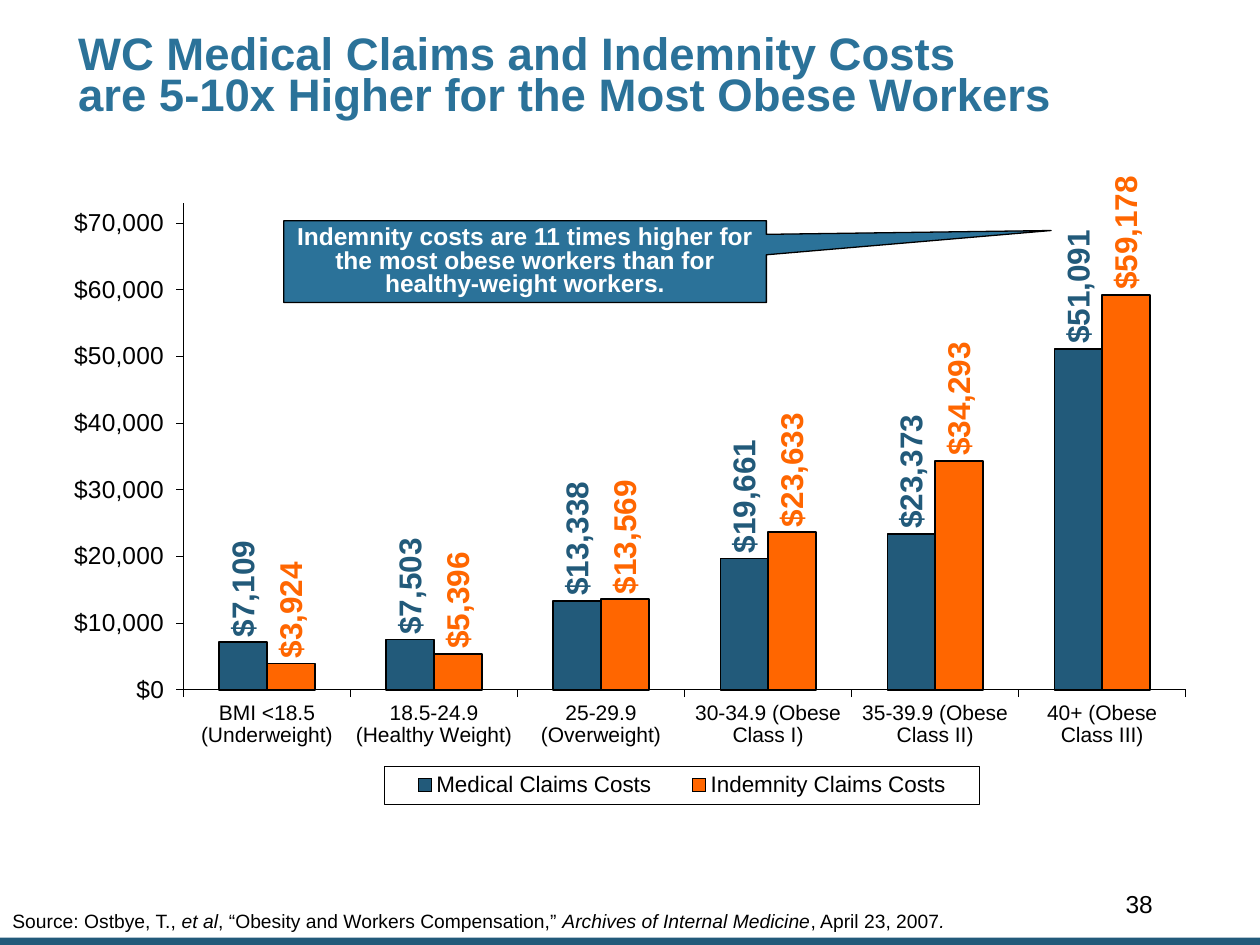
from dataclasses import dataclass
from lxml.etree import SubElement
from pptx import Presentation
from pptx.chart.data import CategoryChartData
from pptx.dml.color import RGBColor
from pptx.enum.chart import XL_CHART_TYPE, XL_LABEL_POSITION, XL_LEGEND_POSITION, XL_TICK_MARK
from pptx.enum.shapes import MSO_SHAPE
from pptx.enum.text import MSO_ANCHOR, MSO_AUTO_SIZE, PP_ALIGN
from pptx.oxml import parse_xml
from pptx.oxml.ns import nsdecls, qn
from pptx.util import Cm, Pt

TITLE = "WC Medical Claims and Indemnity Costs\vare 5-10x Higher for the Most Obese Workers"
CALLOUT = ("Indemnity costs are 11 times higher for the most obese workers "
           "than for healthy-weight workers.")
PAGE_NUMBER = "38"
SOURCE = [
    ("Source: Ostbye, T., ", False),
    ("et al", True),
    (", “Obesity and Workers Compensation,” ", False),
    ("Archives of Internal Medicine", True),
    (", April 23, 2007", False),
    (".", True),
]
CATEGORIES = [
    "BMI <18.5 (Underweight)", "18.5-24.9 (Healthy Weight)", "25-29.9 (Overweight)",
    "30-34.9 (Obese Class I)", "35-39.9 (Obese Class II)", "40+ (Obese Class III)",
]
COSTS = {
    "Medical Claims Costs": [7109, 7503, 13338, 19661, 23373, 51091],
    "Indemnity Claims Costs": [3924, 5396, 13569, 23633, 34293, 59178],
}
MONEY = '"$"#,##0_);[Red]\\("$"#,##0\\)'
PLOT_AREA = {"x": 0.145, "y": 0.057, "w": 0.825, "h": 0.755}
LEGEND_AREA = {"x": 0.31, "y": 0.93, "w": 0.49, "h": 0.06}


@dataclass(frozen=True)
class Theme:
    font: str = "Arial"
    black: RGBColor = RGBColor(0, 0, 0)
    white: RGBColor = RGBColor(255, 255, 255)
    blue: RGBColor = RGBColor(0x2B, 0x72, 0x99)
    navy: RGBColor = RGBColor(0x22, 0x5A, 0x7A)
    orange: RGBColor = RGBColor(0xFF, 0x66, 0x00)
    title: float = 26
    value: float = 18
    body: float = 14
    legend: float = 12.8
    category: float = 12
    source: float = 11


THEME = Theme()


def set_font(font, size, color, bold=False):
    font.name, font.size, font.bold = THEME.font, Pt(size), bold
    font.color.rgb = color


def set_line(line, width):
    line.color.rgb = THEME.black
    line.width = Pt(width)


def place(shape, left, top, width, height):
    shape.left, shape.top = Cm(left), Cm(top)
    shape.width, shape.height = Cm(width), Cm(height)


def make_layout(area, inner=False):
    layout = parse_xml(f"<c:layout {nsdecls('c')}/>")
    manual = SubElement(layout, qn("c:manualLayout"))
    settings = {"layoutTarget": "inner"} if inner else {}
    settings.update(xMode="edge", yMode="edge", **area)
    for name, value in settings.items():
        SubElement(manual, qn(f"c:{name}")).set("val", str(value))
    return layout


def add_title(page):
    title = page.shapes.title
    place(title, 1.32, 0.66, 21.87, 1.88)
    frame = title.text_frame
    frame.text = TITLE
    frame.auto_size = MSO_AUTO_SIZE.NONE
    frame.vertical_anchor = MSO_ANCHOR.BOTTOM
    para = frame.paragraphs[0]
    para.alignment, para.line_spacing = PP_ALIGN.LEFT, 0.75
    set_font(para.font, THEME.title, THEME.blue, True)


def add_footer(page):
    band = page.shapes.add_shape(MSO_SHAPE.RECTANGLE, 0, Cm(18.9), Cm(25.4), Cm(0.15))
    band.shadow.inherit = False
    band.fill.solid()
    band.fill.fore_color.rgb = THEME.navy
    band.line.fill.background()

    number = page.shapes.add_textbox(Cm(18.21), Cm(17.58), Cm(5.28), Cm(1.27))
    number.text_frame.text = PAGE_NUMBER
    number.text_frame.word_wrap = True
    number.text_frame.vertical_anchor = MSO_ANCHOR.MIDDLE
    para = number.text_frame.paragraphs[0]
    para.alignment = PP_ALIGN.RIGHT
    set_font(para.font, THEME.body, THEME.black)

    source = page.shapes.add_textbox(0, Cm(18.26), Cm(19.46), Cm(0.69))
    source.text_frame.word_wrap = False
    para = source.text_frame.paragraphs[0]
    para.line_spacing = 0.9
    set_font(para.font, THEME.source, THEME.black)
    for text, italic in SOURCE:
        span = para.add_run()
        span.text, span.font.italic = text, italic


def format_axis(axis, size):
    axis.has_major_gridlines = False
    axis.major_tick_mark = XL_TICK_MARK.OUTSIDE
    axis.minor_tick_mark = XL_TICK_MARK.NONE
    set_line(axis.format.line, 0.25)
    set_font(axis.tick_labels.font, size, THEME.black)


def format_series(series, color):
    series.invert_if_negative = False
    series.format.fill.solid()
    series.format.fill.fore_color.rgb = color
    set_line(series.format.line, 1)
    labels = series.data_labels
    labels.show_value = True
    labels.position = XL_LABEL_POSITION.OUTSIDE_END
    labels.number_format, labels.number_format_is_linked = MONEY, False
    set_font(labels.font, THEME.value, color, True)
    body = series._element.xpath("c:dLbls/c:txPr/a:bodyPr")[0]
    body.set("rot", "-5400000")
    body.set("vert", "horz")


def format_legend(chart):
    chart.has_legend = True
    legend = chart.legend
    legend.position = XL_LEGEND_POSITION.BOTTOM
    legend.include_in_layout = False
    set_font(legend.font, THEME.legend, THEME.black)
    element = legend._element
    for old in element.findall(qn("c:layout")):
        element.remove(old)
    element.find(qn("c:legendPos")).addnext(make_layout(LEGEND_AREA))
    element.find(qn("c:overlay")).addnext(parse_xml(
        f"<c:spPr {nsdecls('c', 'a')}><a:ln w='3175'><a:solidFill>"
        f"<a:srgbClr val='{THEME.black}'/></a:solidFill></a:ln></c:spPr>"))


def add_cost_chart(page):
    data = CategoryChartData(number_format=MONEY)
    data.categories = CATEGORIES
    for name, values in COSTS.items():
        data.add_series(name, values)
    chart = page.shapes.add_chart(XL_CHART_TYPE.COLUMN_CLUSTERED, Cm(0.15), Cm(3.35),
                                  Cm(24.49), Cm(13), data).chart
    chart.has_title = False
    set_font(chart.font, THEME.value, THEME.black)
    plot = chart.plots[0]
    plot.gap_width, plot.overlap, plot.vary_by_categories = 150, 0, False
    for series, color in zip(plot.series, (THEME.navy, THEME.orange)):
        format_series(series, color)

    format_axis(chart.category_axis, THEME.category)
    axis = chart.value_axis
    format_axis(axis, THEME.body)
    axis.minimum_scale, axis.maximum_scale, axis.major_unit = 0, 73000, 10000
    axis.tick_labels.number_format = MONEY
    axis.tick_labels.number_format_is_linked = False

    area = chart._chartSpace.chart.plotArea
    for old in area.findall(qn("c:layout")):
        area.remove(old)
    area.insert(0, make_layout(PLOT_AREA, inner=True))
    format_legend(chart)


def add_callout(page):
    box = page.shapes.add_shape(MSO_SHAPE.RECTANGULAR_CALLOUT, Cm(5.72), Cm(4.45),
                                Cm(9.73), Cm(1.65))
    box.adjustments[0], box.adjustments[1] = 1.09, -0.38
    box.shadow.inherit = False
    box.fill.solid()
    box.fill.fore_color.rgb = THEME.blue
    set_line(box.line, 0.75)
    frame = box.text_frame
    frame.text, frame.word_wrap = CALLOUT, True
    frame.vertical_anchor = MSO_ANCHOR.TOP
    para = frame.paragraphs[0]
    para.alignment, para.line_spacing = PP_ALIGN.CENTER, 0.8
    set_font(para.font, THEME.body, THEME.white, True)


def main():
    deck = Presentation()
    deck.slide_width, deck.slide_height = Cm(25.4), Cm(19.05)
    page = deck.slides.add_slide(deck.slide_layouts[5])
    add_title(page)
    add_footer(page)
    add_cost_chart(page)
    add_callout(page)
    deck.save("out.pptx")


if __name__ == "__main__":
    main()
